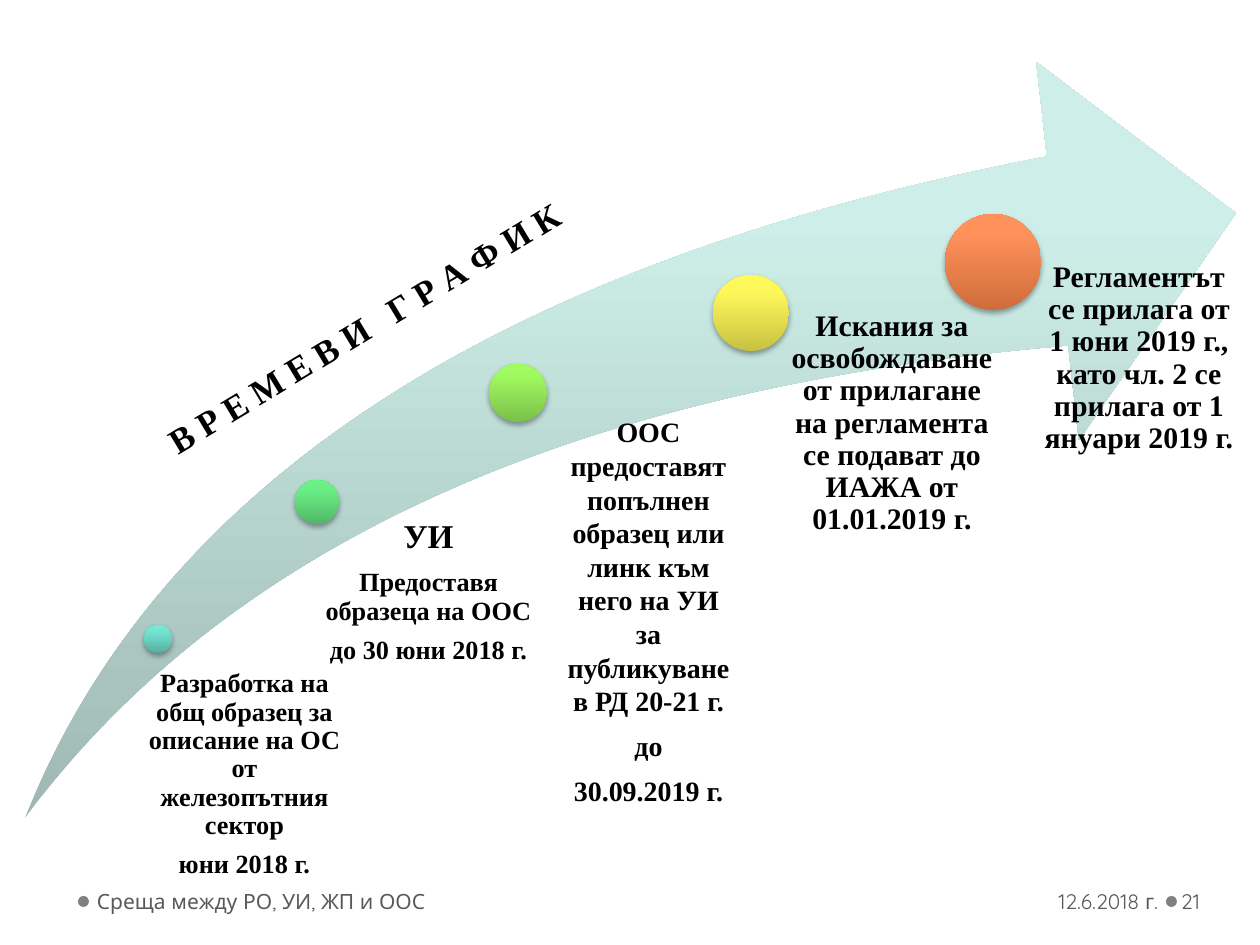
from copy import deepcopy

from lxml import etree
from pptx import Presentation
from pptx.dml.color import RGBColor
from pptx.enum.shapes import MSO_SHAPE
from pptx.enum.text import MSO_ANCHOR, MSO_AUTO_SIZE, PP_ALIGN
from pptx.oxml.ns import qn
from pptx.util import Emu, Pt

PX = 914400 / 126
TITLE_ONLY = 5
OVAL, SWOOSH = MSO_SHAPE.OVAL, MSO_SHAPE.SWOOSH_ARROW
LEFT, CENTER, RIGHT = PP_ALIGN.LEFT, PP_ALIGN.CENTER, PP_ALIGN.RIGHT
TOP, MIDDLE = MSO_ANCHOR.TOP, MSO_ANCHOR.MIDDLE
SERIF, SANS = "Times New Roman", "Quicksand"

BLACK = RGBColor(0x00, 0x00, 0x00)
GRAY = RGBColor(0x59, 0x59, 0x59)
DOT_GRAY = RGBColor(0x80, 0x80, 0x80)
# Gradients run from the bottom up, with stops at 0, 80 and 100 %
STOPS = (0, 0.8, 1)
SWOOSH_FILL = (RGBColor(0x9F, 0xB8, 0xB3), RGBColor(0xCE, 0xEF, 0xE9), RGBColor(0xCF, 0xF1, 0xEA))
TEAL = (RGBColor(0x59, 0xB0, 0xA2), RGBColor(0x74, 0xE5, 0xD2), RGBColor(0x72, 0xE8, 0xD5))
GREEN = (RGBColor(0x52, 0xB8, 0x67), RGBColor(0x6A, 0xEF, 0x86), RGBColor(0x68, 0xF3, 0x85))
LIME = (RGBColor(0x7B, 0xC0, 0x4A), RGBColor(0xA0, 0xF9, 0x60), RGBColor(0xA0, 0xFD, 0x5E))
YELLOW = (RGBColor(0xC8, 0xC2, 0x42), RGBColor(0xFF, 0xF8, 0x5B), RGBColor(0xFF, 0xF8, 0x5C))
ORANGE = (RGBColor(0xCF, 0x6C, 0x3B), RGBColor(0xFF, 0x92, 0x5B), RGBColor(0xFF, 0x93, 0x5D))

# Dot (x, y, diameter), gradient, label box, label insets (left, top),
# line spacing, paragraphs (text, size); places are relative to the timeline
MILESTONES = [
    ((119, 563, 28), TEAL, (105, 533, 214, 268), (15, 75), 0.9,
     [("Разработка на общ образец за описание на ОС от железопътния сектор", 15),
      ("юни 2018 г.", 15)]),
    ((270, 418, 44), GREEN, (274, 458, 236, 281), (23, 0), 0.9,
     [("УИ", 19), ("Предоставя образеца на ООС", 15), ("до 30 юни 2018 г.", 15)]),
    ((464, 302, 58), LIME, (509, 353, 199, 382), (30, 0), 1.0,
     [("ООС предоставят попълнен образец или линк към него на УИ "
       "за публикуване в РД 20-21 г.", 16), ("до", 16), ("30.09.2019 г.", 16)]),
    ((688, 213, 76), YELLOW, (726, 249, 242, 507), (40, 0), 0.9,
     [("Искания за освобождаване от прилагане на регламента "
       "се подават до ИАЖА от 01.01.2019 г.", 17)]),
    ((920, 152, 96), ORANGE, (968, 200, 242, 557), (50, 0), 0.9,
     [("Регламентът се прилага от 1 юни 2019 г., "
       "като чл. 2 се прилага от 1 януари 2019 г.", 17)]),
]


def px(*values):
    return [Emu(round(v * PX)) for v in values]


def write(p, text, size=15, font=SERIF, color=BLACK, bold=True, align=CENTER):
    p.alignment = align
    r = p.add_run()
    r.text = text
    r.font.size, r.font.name, r.font.bold = Pt(size), font, bold
    r.font.color.rgb = color
    return r


def frame(sp, insets, anchor=TOP):
    """Prepare a text frame; insets are left, top, right, bottom."""
    tf = sp.text_frame
    tf.word_wrap = True
    tf.auto_size = MSO_AUTO_SIZE.NONE
    tf.vertical_anchor = anchor
    tf.margin_left, tf.margin_top, tf.margin_right, tf.margin_bottom = px(*insets)
    return tf


def add_plain(s, kind, x, y, w, h):
    sp = s.shapes.add_shape(kind, *px(x, y, w, h))
    sp.line.fill.background()
    sp.shadow.inherit = False
    return sp


def fill_gradient(sp, colors):
    sp.fill.gradient()
    sp.fill.gradient_angle = 90
    stops = next(sp.element.iter(qn("a:gsLst")))
    stops.append(deepcopy(stops[-1]))
    for stop, position, color in zip(sp.fill.gradient_stops, STOPS, colors):
        stop.position = position
        stop.color.rgb = color


def add_shadow(sp):
    effects = next(sp.element.iter(qn("a:effectLst")))
    shadow = etree.SubElement(effects, qn("a:outerShdw"), blurRad=str(Pt(3.1)),
                              dist=str(Pt(1.8)), dir="5400000", rotWithShape="0")
    color = etree.SubElement(shadow, qn("a:srgbClr"), val=str(BLACK))
    etree.SubElement(color, qn("a:alpha"), val="35000")


def add_label(s, x, y, w, h, insets, spacing, lines):
    tf = frame(s.shapes.add_textbox(*px(x, y, w, h)), (*insets, 0, 0))
    for i, (text, size) in enumerate(lines):
        p = tf.add_paragraph() if i else tf.paragraphs[0]
        p.line_spacing = spacing
        p.space_after = Pt(0.4 * size)
        write(p, text, size)


def add_timeline(s, x, y, w, h):
    arrow = add_plain(s, SWOOSH, x, y, w, h)
    arrow.adjustments[0] = arrow.adjustments[1] = 0.25
    fill_gradient(arrow, SWOOSH_FILL)
    for (dx, dy, d), colors, (lx, ly, lw, lh), insets, spacing, lines in MILESTONES:
        dot = add_plain(s, OVAL, x + dx, y + dy, d, d)
        fill_gradient(dot, colors)
        add_shadow(dot)
        add_label(s, x + lx, y + ly, lw, lh, insets, spacing, lines)


def add_title(s, x, y, w, h):
    sp = s.shapes.title
    sp.left, sp.top, sp.width, sp.height = px(x, y, w, h)
    sp.rotation = 328.9
    p = frame(sp, (13, 6, 13, 6)).paragraphs[0]
    write(p, "В Р Е М Е В И", 20, align=LEFT)
    gap = write(p, " ", 20, align=LEFT)
    gap.font._element.set("spc", "1000")
    write(p, "Г Р А Ф И К", 20, align=LEFT)


def add_footer(s, x, y, w, h):
    for dot_x in (0, 1088):
        dot = add_plain(s, OVAL, x + dot_x, y + 20, 11, 11)
        dot.fill.solid()
        dot.fill.fore_color.rgb = DOT_GRAY
    for left, width, insets, align, text in (
        (799, 287, (13, 6, 6, 6), RIGHT, "12.6.2018 г."),
        (13, 392, (6, 6, 13, 6), LEFT, "Среща между РО, УИ, ЖП и ООС"),
        (1099, w - 1099, (4, 6, 6, 6), LEFT, "21"),
    ):
        sp = s.shapes.add_textbox(*px(x + left, y, width, h))
        tf = frame(sp, insets, MIDDLE)
        write(tf.paragraphs[0], text, 12, SANS, GRAY, False, align)


def main():
    prs = Presentation()
    prs.slide_width, prs.slide_height = px(1260, 945)
    s = prs.slides.add_slide(prs.slide_layouts[TITLE_ONLY])
    add_timeline(s, 25, 62, 1211, 756)
    add_title(s, 125, 297, 488, 55)
    add_footer(s, 78, 876, 1176, 50)
    prs.save("out.pptx")


if __name__ == "__main__":
    main()
